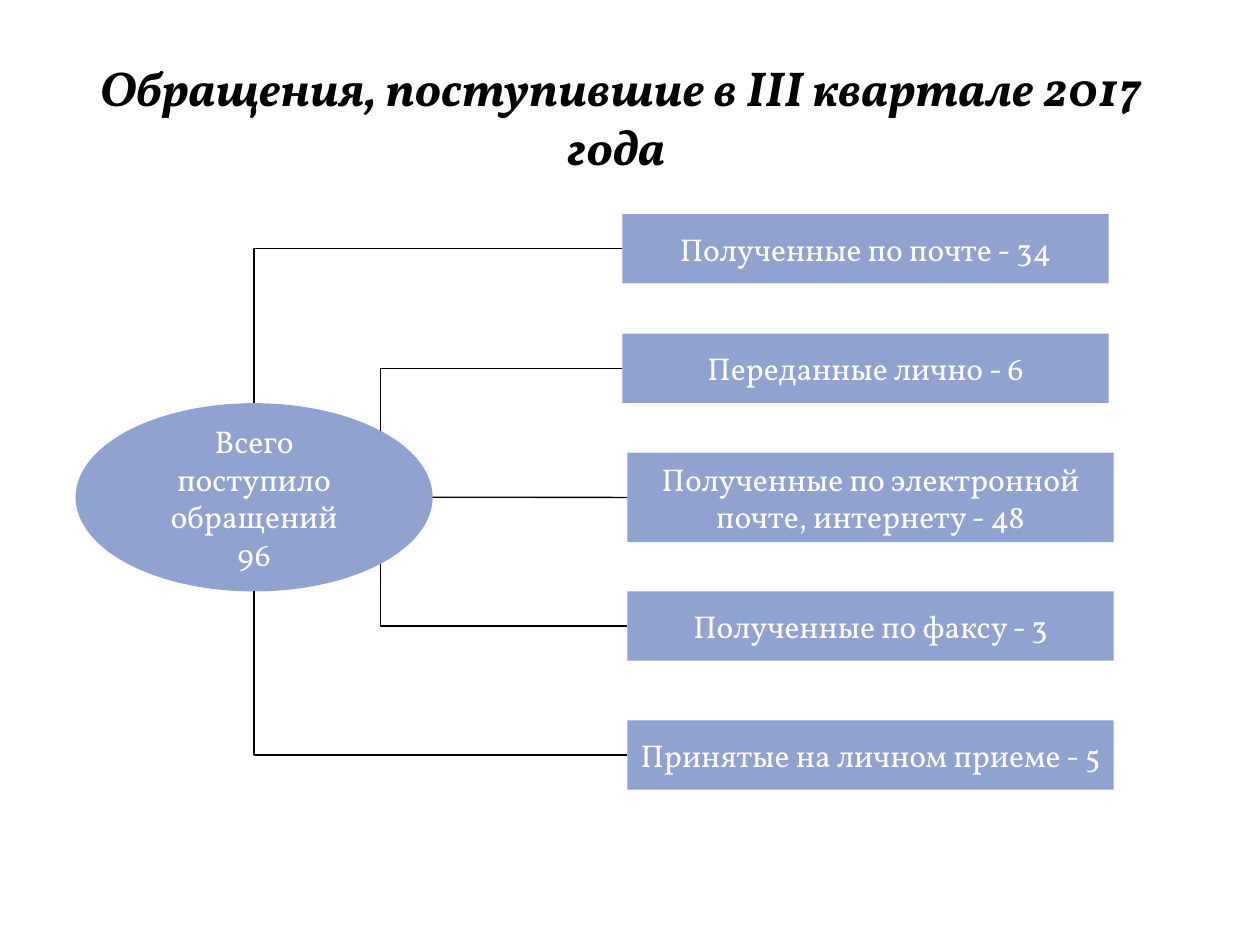
from dataclasses import dataclass
from math import sqrt

from pptx import Presentation
from pptx.dml.color import RGBColor
from pptx.enum import shapes, text
from pptx.oxml import parse_xml
from pptx.oxml.ns import nsdecls, qn
from pptx.util import Pt


@dataclass(frozen=True)
class Theme:
    font: str = "Vollkorn"
    title_size: float = 28
    body_size: float = 18
    line_width: float = 0.75
    ink: RGBColor = RGBColor(0, 0, 0)
    light: RGBColor = RGBColor(255, 255, 255)
    node: RGBColor = RGBColor(0x90, 0xA2, 0xCF)


THEME = Theme()

# Label, left, top and height within the diagram box
CHANNELS = [
    ("Полученные по почте - 34", 312.5, 0, 39.6),
    ("Переданные лично - 6", 312.5, 68.2, 39.6),
    ("Полученные по электронной почте, интернету - 48", 315.3, 136.3, 51.1),
    ("Полученные по факсу - 3", 315.3, 215.5, 39.6),
    ("Принятые на личном приеме - 5", 315.3, 289.3, 39.6),
]
CHANNEL_WIDTH = 277.9
TOTAL_TOP, TOTAL_WIDTH, TOTAL_HEIGHT = 108, 204, 107.6


def write(shape, content, size, color, bold=False, italic=False):
    frame = shape.text_frame
    frame.word_wrap = True
    frame.vertical_anchor = text.MSO_ANCHOR.MIDDLE
    frame.text = content
    for paragraph in frame.paragraphs:
        paragraph.alignment = text.PP_ALIGN.CENTER
        for run in paragraph.runs:
            font = run.font
            font.name, font.size = THEME.font, Pt(size)
            font.bold, font.italic = bold, italic
            font.color.rgb = color


def add_node(slide, kind, content, left, top, width, height):
    shape = slide.shapes.add_shape(kind, Pt(left), Pt(top), Pt(width), Pt(height))
    shape.shadow.inherit = False
    shape.fill.solid()
    shape.fill.fore_color.rgb = THEME.node
    shape.line.fill.background()
    write(shape, content, THEME.body_size, THEME.light)
    return shape


def add_link(slide, channel, x, y, bent):
    """Join the left side of a channel to a point on the total's outline."""
    kind = shapes.MSO_CONNECTOR.ELBOW if bent else shapes.MSO_CONNECTOR.STRAIGHT
    middle = channel.top + channel.height // 2
    link = slide.shapes.add_connector(kind, channel.left, middle, Pt(x), Pt(y))
    link.line.color.rgb = THEME.ink
    link.line.width = Pt(THEME.line_width)
    properties = link._element.spPr
    properties.append(parse_xml(f"<a:effectLst {nsdecls('a')}/>"))
    if bent:  # a single corner
        properties.find(qn("a:prstGeom")).set("prst", "bentConnector2")
    else:
        link.begin_connect(channel, 1)


def add_title(slide, left, top, width, height):
    box = slide.shapes.add_textbox(Pt(left), Pt(top), Pt(width), Pt(height))
    write(box, "Обращения, поступившие в III квартале 2017 года ",
          THEME.title_size, THEME.ink, bold=True, italic=True)


def add_diagram(slide, left, top):
    # Total
    total_top = top + TOTAL_TOP
    add_node(slide, shapes.MSO_SHAPE.OVAL, "Всего поступило обращений\n96",
             left, total_top, TOTAL_WIDTH, TOTAL_HEIGHT)

    # Points on the ellipse from its top, by the right, to its bottom
    radius_x, radius_y = TOTAL_WIDTH / 2, TOTAL_HEIGHT / 2
    diagonal = sqrt(0.5)
    directions = [(0, -1), (diagonal, -diagonal), (1, 0), (diagonal, diagonal), (0, 1)]

    # Channels and their links
    for (label, x, y, height), (dx, dy) in zip(CHANNELS, directions):
        channel = add_node(slide, shapes.MSO_SHAPE.RECTANGLE, label,
                           left + x, top + y, CHANNEL_WIDTH, height)
        add_link(slide, channel, left + radius_x * (1 + dx),
                 total_top + radius_y * (1 + dy), bent=dy != 0)


def main():
    presentation = Presentation()
    presentation.slide_width, presentation.slide_height = Pt(720), Pt(540)
    slide = presentation.slides.add_slide(presentation.slide_layouts[6])
    add_title(slide, 25.2, 21.6, 658.8, 90)
    add_diagram(slide, 43.2, 122.4)
    presentation.save("out.pptx")


if __name__ == "__main__":
    main()
